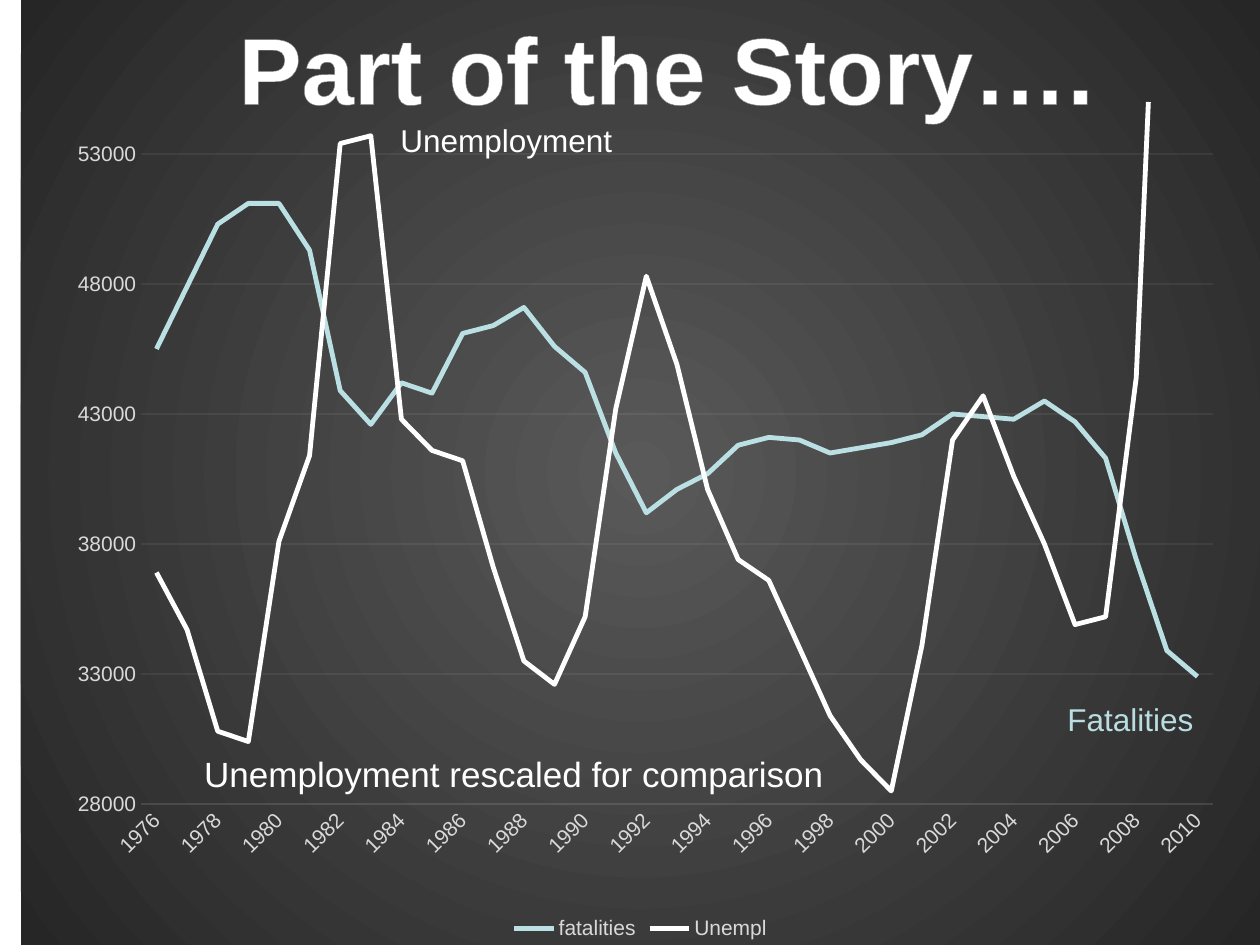
from lxml import etree
from pptx import Presentation
from pptx import util as u
from pptx.chart.data import CategoryChartData
from pptx.dml.color import RGBColor
from pptx.enum import chart as charts, dml, text
from pptx.oxml import parse_xml
from pptx.oxml.ns import nsdecls, qn

COLORS = {
    "white": "FFFFFF", "series_blue": "BBE0E3", "label_blue": "BADDE1",
    "axis_text": "D9D9D9", "grid": "F2F2F2", "outline": "808080",
    "center": "595959", "edge": "262626",
}
FONT = "Arial"
EMU_PER_PX = 914400 / 126

YEARS = range(1976, 2011)
SERIES = [
    ("fatalities", "series_blue", [
        45500, 47900, 50300, 51100, 51100, 49300, 43900, 42600, 44200,
        43800, 46100, 46400, 47100, 45600, 44600, 41500, 39200, 40100,
        40700, 41800, 42100, 42000, 41500, 41700, 41900, 42200, 43000,
        42900, 42800, 43500, 42700, 41300, 37400, 33900, 32900]),
    ("Unempl", "white", [
        36900, 34700, 30800, 30400, 38100, 41400, 53400, 53700, 42800,
        41600, 41200, 37100, 33500, 32600, 35200, 43200, 48300, 44900,
        40100, 37400, 36600, 34000, 31400, 29700, 28500, 34100, 42000,
        43700, 40600, 38000, 34900, 35200, 44400, 71100, 74300]),
]
CHART_BOX = (21, 0, 1239, 945)
PLOT_LAYOUT = {"x": 0.097, "y": 0.108, "w": 0.865, "h": 0.743}
TITLE = ("Part of the Story….", (215, 4, 903, 127), 54)
LABELS = [
    ("Unemployment rescaled for comparison", (189, 746, 650, 55), 20, "white", True),
    ("Fatalities", (1055, 694, 152, 50), 18, "label_blue", False),
    ("Unemployment", (388, 115, 239, 50), 18, "white", False),
]


def rgb(name):
    return RGBColor.from_string(COLORS[name])


def px(*lengths):
    return [u.Emu(round(length * EMU_PER_PX)) for length in lengths]


def style_font(font, size, color):
    font.name = FONT
    font.size = u.Pt(size)
    font.color.rgb = rgb(color)


def style_faint_line(line):
    line.width = u.Pt(0.75)
    line.color.rgb = rgb("grid")
    color = line.fill._xPr.find(".//" + qn("a:srgbClr"))
    etree.SubElement(color, qn("a:alpha"), val="10000")


def add_text(slide, content, box, size, centered, wrap):
    frame = slide.shapes.add_textbox(*px(*box)).text_frame
    frame.word_wrap = wrap
    frame.auto_size = text.MSO_AUTO_SIZE.SHAPE_TO_FIT_TEXT
    paragraph = frame.paragraphs[0]
    paragraph.alignment = text.PP_ALIGN.CENTER if centered else text.PP_ALIGN.LEFT
    run = paragraph.add_run()
    run.text = content
    run.font.name = FONT
    run.font.size = u.Pt(size)
    return run


def add_title(slide):
    content, box, size = TITLE
    font = add_text(slide, content, box, size, True, True).font
    font.bold = True
    font.fill.patterned()
    font.fill.pattern = dml.MSO_PATTERN.NARROW_HORIZONTAL
    font.fill.fore_color.rgb = rgb("white")
    font.fill.back_color.rgb = rgb("white")
    font._rPr.insert(0, parse_xml(
        f'<a:ln {nsdecls("a")} w="12700"><a:solidFill>'
        f'<a:srgbClr val="{COLORS["outline"]}"/></a:solidFill></a:ln>'))


def set_background(chart):
    stops = "".join(
        f'<a:gs pos="{position}"><a:srgbClr val="{COLORS[name]}"/></a:gs>'
        for position, name in ((0, "center"), (100000, "edge")))
    chart._chartSpace.find(qn("c:chart")).addnext(parse_xml(
        f'<c:spPr {nsdecls("c", "a")}><a:gradFill><a:gsLst>{stops}</a:gsLst>'
        '<a:path path="circle"><a:fillToRect l="50000" t="50000" r="50000" b="50000"/>'
        '</a:path></a:gradFill><a:ln><a:noFill/></a:ln></c:spPr>'))


def set_plot_layout(chart):
    plot_area = chart._chartSpace.find(".//" + qn("c:plotArea"))
    for old in plot_area.findall(qn("c:layout")):
        plot_area.remove(old)
    sizes = "".join(f'<c:{key} val="{value}"/>' for key, value in PLOT_LAYOUT.items())
    plot_area.insert(0, parse_xml(
        f'<c:layout {nsdecls("c")}><c:manualLayout><c:layoutTarget val="inner"/>'
        f'<c:xMode val="edge"/><c:yMode val="edge"/>{sizes}'
        '</c:manualLayout></c:layout>'))


def style_axes(chart):
    for axis in (chart.category_axis, chart.value_axis):
        axis.major_tick_mark = axis.minor_tick_mark = charts.XL_TICK_MARK.NONE
        style_font(axis.tick_labels.font, 12, "axis_text")
    years = chart.category_axis
    years.has_major_gridlines = False
    style_faint_line(years.format.line)
    years._element.find(".//" + qn("a:bodyPr")).set("rot", "-2700000")
    skip = parse_xml(f'<c:tickLblSkip {nsdecls("c")} val="2"/>')
    years._element.find(qn("c:noMultiLvlLbl")).addprevious(skip)

    values = chart.value_axis
    values.minimum_scale, values.maximum_scale = 28000, 55000
    values.major_unit = 5000
    values.tick_labels.number_format = "General"
    values.tick_labels.number_format_is_linked = False
    values.format.line.fill.background()
    values.has_major_gridlines = True
    style_faint_line(values.major_gridlines.format.line)


def add_line_chart(slide):
    data = CategoryChartData()
    data.categories = [str(year) for year in YEARS]
    for name, _, values in SERIES:
        data.add_series(name, values)
    chart = slide.shapes.add_chart(
        charts.XL_CHART_TYPE.LINE, *px(*CHART_BOX), data).chart
    chart.has_title = False
    chart.font.name = FONT
    chart.font.size = u.Pt(10)
    set_background(chart)
    set_plot_layout(chart)
    style_axes(chart)
    chart.plots[0].vary_by_categories = False
    for series, (_, color, _) in zip(chart.plots[0].series, SERIES):
        series.smooth = False
        series.marker.style = charts.XL_MARKER_STYLE.NONE
        series.format.line.width = u.Pt(2.75)
        series.format.line.color.rgb = rgb(color)
    chart.has_legend = True
    chart.legend.position = charts.XL_LEGEND_POSITION.BOTTOM
    chart.legend.include_in_layout = False
    style_font(chart.legend.font, 12, "axis_text")


def main():
    presentation = Presentation()
    presentation.slide_width, presentation.slide_height = px(1260, 945)
    slide = presentation.slides.add_slide(presentation.slide_layouts[6])
    slide.background.fill.solid()
    slide.background.fill.fore_color.rgb = rgb("white")
    add_line_chart(slide)
    add_title(slide)
    for content, box, size, color, centered in LABELS:
        run = add_text(slide, content, box, size, centered, False)
        run.font.color.rgb = rgb(color)
    presentation.save("out.pptx")


if __name__ == "__main__":
    main()
